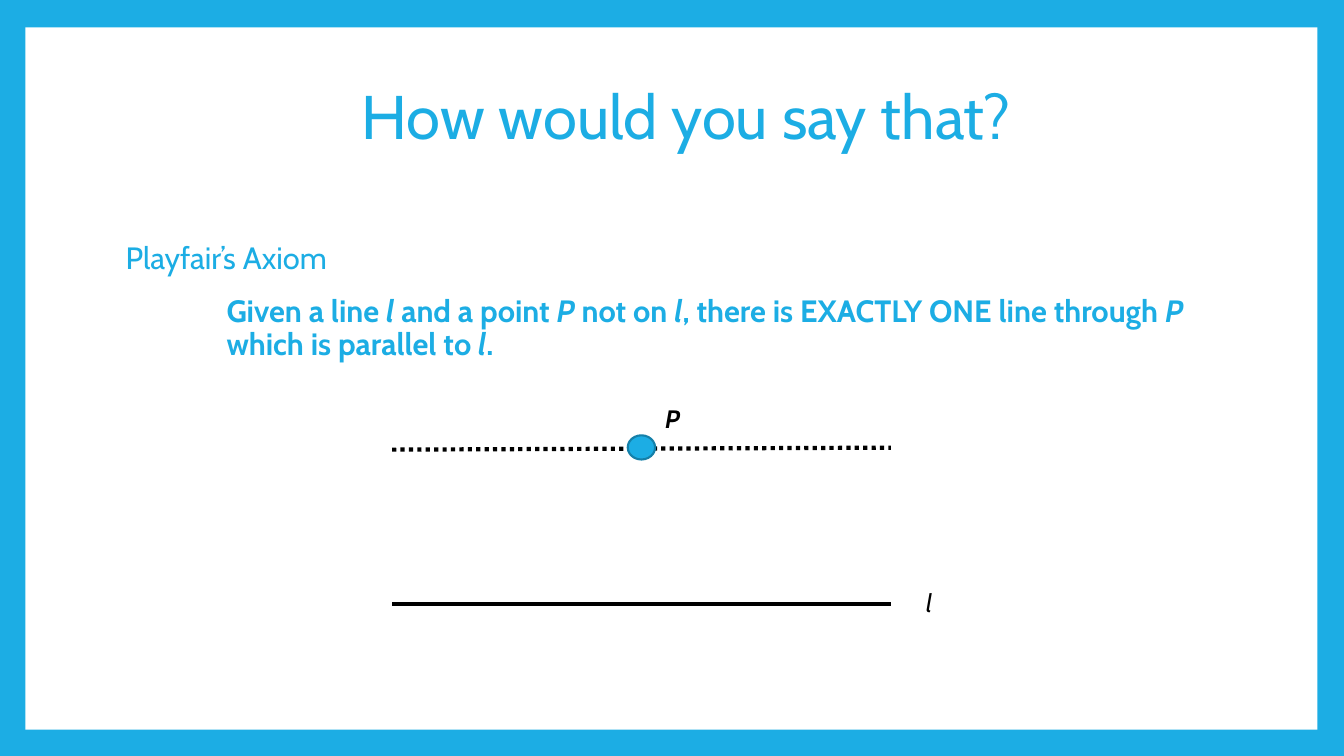
from lxml.etree import SubElement
from pptx import Presentation
from pptx.dml.color import RGBColor
from pptx.enum.dml import MSO_LINE
from pptx.enum.shapes import MSO_CONNECTOR, MSO_SHAPE
from pptx.enum.text import MSO_ANCHOR, PP_ALIGN
from pptx.oxml.ns import qn
from pptx.util import Cm, Pt

COLORS = {"blue": "1CADE4", "outline": "1580A9", "white": "FFFFFF", "black": "000000"}
FONT = "Cabin"
LINE_LEFT, LINE_RIGHT = 9.88, 22.45


def color(name):
    return RGBColor.from_string(COLORS[name])


def add_shape(slide, kind, left, top, width, height, fill, outline=None):
    shape = slide.shapes.add_shape(kind, Cm(left), Cm(top), Cm(width), Cm(height))
    shape.shadow.inherit = False
    shape.fill.solid()
    shape.fill.fore_color.rgb = color(fill)
    if outline:
        shape.line.color.rgb = color(outline)
        shape.line.width = Pt(1.5)
    else:
        shape.line.fill.background()


def add_text_frame(slide, left, top, width, height, wrap=True):
    frame = slide.shapes.add_textbox(Cm(left), Cm(top), Cm(width), Cm(height)).text_frame
    frame.word_wrap = wrap
    return frame


def add_run(paragraph, text, size, tint, bold=False, italic=False):
    run = paragraph.add_run()
    run.text = text
    run.font.name = FONT
    run.font.size = Pt(size)
    run.font.color.rgb = color(tint)
    run.font.bold = bold
    run.font.italic = italic


def set_layout(paragraph, indent):
    paragraph.line_spacing = 0.9
    paragraph.space_before = Pt(14)
    properties = paragraph._p.get_or_add_pPr()
    properties.set("marL", str(Cm(indent)))
    properties.set("indent", "0")


def add_line(slide, start_y, end_y, dash=None):
    line = slide.shapes.add_connector(
        MSO_CONNECTOR.STRAIGHT, Cm(LINE_LEFT), Cm(start_y), Cm(LINE_RIGHT), Cm(end_y))
    line.line.color.rgb = color("black")
    line.line.width = Pt(3)
    if dash:
        line.line.dash_style = dash
    SubElement(line._element.spPr, qn("a:effectLst"))


def add_title(slide):
    title = add_text_frame(slide, 3.58, 1.14, 27.43, 3.76)
    title.vertical_anchor = MSO_ANCHOR.MIDDLE
    heading = title.paragraphs[0]
    heading.alignment = PP_ALIGN.CENTER
    heading.line_spacing = 0.9
    add_run(heading, "How would you say that?", 44, "blue")


def add_axiom(slide):
    body = add_text_frame(slide, 2.79, 5.99, 27.41, 11.23)
    name = body.paragraphs[0]
    set_layout(name, 0.13)
    add_run(name, "Playfair’s Axiom", 22, "blue")

    statement = body.add_paragraph()
    set_layout(statement, 2.67)
    wording = [
        "Given a line ", "l ", "and a point ", "P ", "not on ", "l",
        ", there is EXACTLY ONE line through ", "P ", "which is parallel to ", "l", ".",
    ]
    for position, text in enumerate(wording):
        add_run(statement, text, 22, "blue", bold=True, italic=position % 2 == 1)


def add_diagram(slide):
    add_line(slide, 15.21, 15.21)
    add_line(slide, 11.33, 11.28, MSO_LINE.ROUND_DOT)
    add_shape(slide, MSO_SHAPE.OVAL, 15.82, 10.97, 0.69, 0.61, "blue", "outline")
    point_label = add_text_frame(slide, 16.51, 10.03, 1.57, 1.02)
    add_run(point_label.paragraphs[0], "P", 18, "black", bold=True, italic=True)
    line_label = add_text_frame(slide, 23.09, 14.68, 0.66, 1.02, wrap=False)
    add_run(line_label.paragraphs[0], "l", 18, "black", italic=True)


def main():
    presentation = Presentation()
    presentation.slide_width = Cm(33.87)
    presentation.slide_height = Cm(19.05)
    slide = presentation.slides.add_slide(presentation.slide_layouts[6])
    slide.background.fill.solid()
    slide.background.fill.fore_color.rgb = color("blue")
    add_shape(slide, MSO_SHAPE.RECTANGLE, 0.64, 0.69, 32.56, 17.7, "white")
    add_title(slide)
    add_axiom(slide)
    add_diagram(slide)
    presentation.save("out.pptx")


if __name__ == "__main__":
    main()
